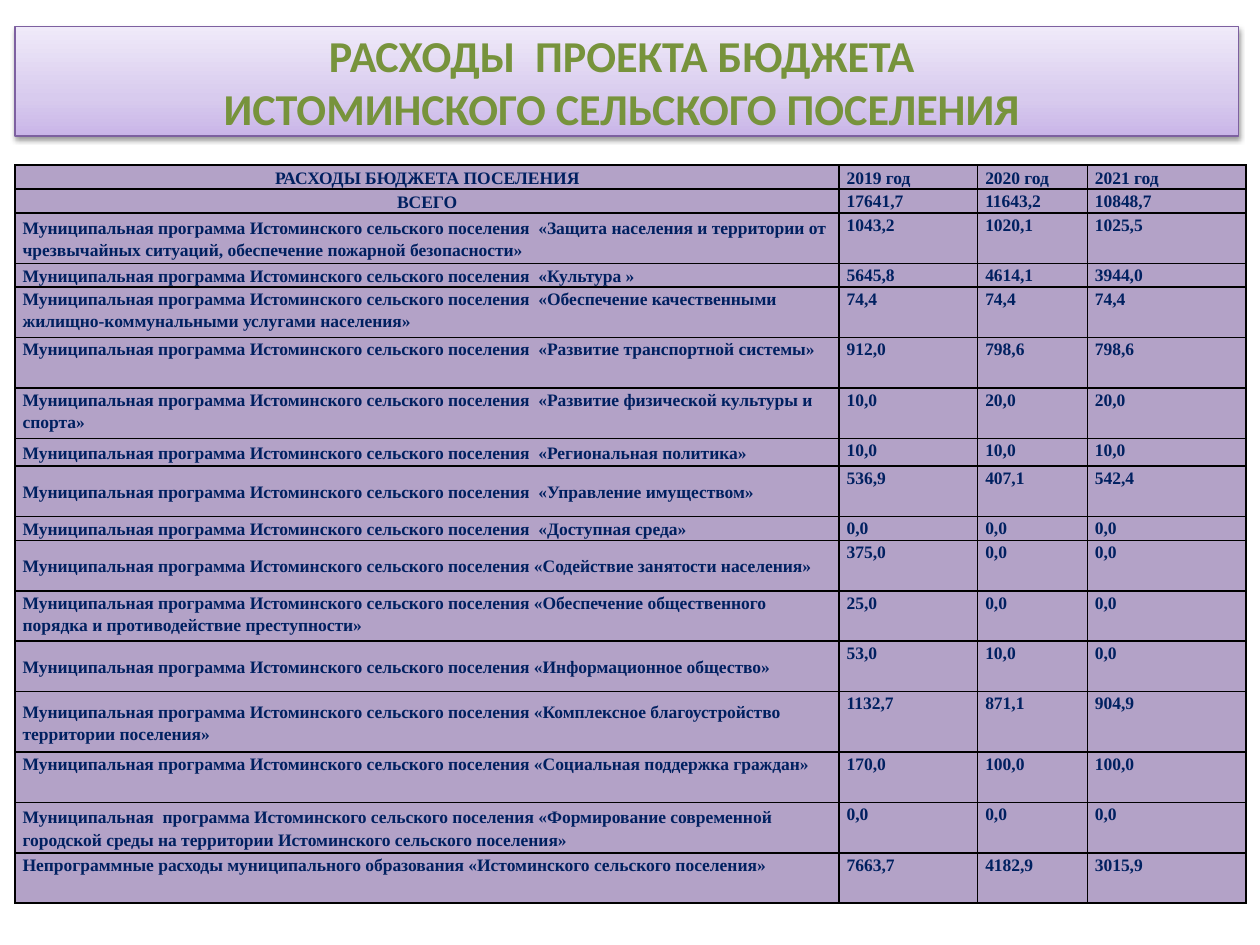
from copy import deepcopy

from pptx import Presentation
from pptx.dml.color import RGBColor
from pptx.enum.text import MSO_ANCHOR as Anchor, MSO_AUTO_SIZE as AutoSize, PP_ALIGN as Align
from pptx.oxml import parse_xml
from pptx.oxml.ns import nsdecls, qn
from pptx.util import Inches, Pt

COLORS = {
    "title": "77933C",
    "title_line": "7D60A0",
    "gradient_bottom": "C9B5E8",
    "gradient_middle": "D8CBEE",
    "gradient_top": "F0EAF9",
    "black": "000000",
    "cell": "B3A2C7",
    "text": "002060",
}

TITLE = "РАСХОДЫ  ПРОЕКТА БЮДЖЕТА \vИСТОМИНСКОГО СЕЛЬСКОГО ПОСЕЛЕНИЯ "
PROGRAM = "Муниципальная программа Истоминского сельского поселения "
COLUMN_WIDTHS = [6.54, 1.1, 0.87, 1.26]
LOW, MEDIUM, TALL, TALLEST = 0.19, 0.22, 0.4, 0.48
TOP, MIDDLE = Anchor.TOP, Anchor.MIDDLE

ROWS = [
    (LOW, MIDDLE, "РАСХОДЫ БЮДЖЕТА ПОСЕЛЕНИЯ", "2019 год", "2020 год", "2021 год"),
    (LOW, MIDDLE, "ВСЕГО", "17641,7", "11643,2", "10848,7"),
    (TALL, MIDDLE, PROGRAM + " «Защита населения и территории от чрезвычайных ситуаций, "
     "обеспечение пожарной безопасности»", "1043,2", "1020,1", "1025,5"),
    (LOW, MIDDLE, PROGRAM + " «Культура »", "5645,8", "4614,1", "3944,0"),
    (TALL, TOP, PROGRAM + " «Обеспечение качественными жилищно-коммунальными "
     "услугами населения»", "74,4", "74,4", "74,4"),
    (TALL, TOP, PROGRAM + " «Развитие транспортной системы»", "912,0", "798,6", "798,6"),
    (TALL, TOP, PROGRAM + " «Развитие физической культуры и спорта»", "10,0", "20,0", "20,0"),
    (MEDIUM, MIDDLE, PROGRAM + " «Региональная политика»", "10,0", "10,0", "10,0"),
    (TALL, MIDDLE, PROGRAM + " «Управление имуществом»", "536,9", "407,1", "542,4"),
    (LOW, MIDDLE, PROGRAM + " «Доступная среда»", "0,0", "0,0", "0,0"),
    (TALL, MIDDLE, PROGRAM + "«Содействие занятости населения»", "375,0", "0,0", "0,0"),
    (TALL, TOP, PROGRAM + "«Обеспечение общественного порядка и противодействие "
     "преступности»", "25,0", "0,0", "0,0"),
    (TALL, MIDDLE, PROGRAM + "«Информационное общество»", "53,0", "10,0", "0,0"),
    (TALLEST, MIDDLE, PROGRAM + "«Комплексное благоустройство территории поселения»",
     "1132,7", "871,1", "904,9"),
    (TALL, TOP, PROGRAM + "«Социальная поддержка граждан»", "170,0", "100,0", "100,0"),
    (TALL, MIDDLE, "Муниципальная  программа Истоминского сельского поселения «Формирование "
     "современной городской среды на территории Истоминского сельского поселения»",
     "0,0", "0,0", "0,0"),
    (TALL, TOP, "Непрограммные расходы муниципального образования "
     "«Истоминского сельского поселения»", "7663,7", "4182,9", "3015,9"),
]


def rgb(name):
    return RGBColor.from_string(COLORS[name])


def format_runs(para, font_name, size, color):
    for span in para.runs:
        span.font.name = font_name
        span.font.size = Pt(size)
        span.font.bold = True
        span.font.color.rgb = rgb(color)


def add_gradient_and_shadow(shape):
    stops = [(0, "gradient_bottom"), (35, "gradient_middle"), (100, "gradient_top")]
    stop_xml = "".join(
        f'<a:gs pos="{position * 1000}"><a:srgbClr val="{COLORS[name]}"/></a:gs>'
        for position, name in stops
    )
    properties = shape.element.spPr
    properties.append(parse_xml(
        f'<a:gradFill {nsdecls("a")} rotWithShape="1"><a:gsLst>{stop_xml}</a:gsLst>'
        '<a:lin ang="16200000" scaled="0"/></a:gradFill>'
    ))
    properties.append(parse_xml(
        f'<a:effectLst {nsdecls("a")}><a:outerShdw blurRad="{Pt(3.1)}" dist="{Pt(1.6)}" '
        f'dir="5400000" rotWithShape="0"><a:srgbClr val="{COLORS["black"]}">'
        '<a:alpha val="38000"/></a:srgbClr></a:outerShdw></a:effectLst>'
    ))


def place_title(page, left, top, width, height):
    title = page.shapes.title
    title.left, title.top, title.width, title.height = left, top, width, height
    add_gradient_and_shadow(title)
    title.line.color.rgb = rgb("title_line")
    title.line.width = Pt(0.75)
    frame = title.text_frame
    frame.text = TITLE
    frame.word_wrap = True
    frame.auto_size = AutoSize.NONE
    frame.vertical_anchor = MIDDLE
    para = frame.paragraphs[0]
    para.alignment = Align.CENTER
    format_runs(para, "Calibri", 25.2, "title")
    line_break = para._p.find(qn("a:br"))
    line_break.insert(0, deepcopy(para.runs[0]._r.rPr))


def add_borders(cell):
    properties = cell._tc.get_or_add_tcPr()
    for side in ("lnL", "lnR", "lnT", "lnB"):
        properties.append(parse_xml(
            f'<a:{side} {nsdecls("a")} w="{Pt(1)}"><a:solidFill>'
            f'<a:srgbClr val="{COLORS["black"]}"/></a:solidFill></a:{side}>'
        ))


def fill_cell(cell, text, anchor, alignment):
    cell.text_frame.text = text
    cell.margin_left = cell.margin_right = Inches(0.06)
    cell.margin_top = cell.margin_bottom = 0
    cell.vertical_anchor = anchor
    add_borders(cell)
    cell.fill.solid()
    cell.fill.fore_color.rgb = rgb("cell")
    para = cell.text_frame.paragraphs[0]
    para.alignment = alignment
    para.line_spacing = 1.15
    format_runs(para, "Times New Roman", 10, "text")


def place_budget_table(page, left, top, width, height):
    table = page.shapes.add_table(
        len(ROWS), len(COLUMN_WIDTHS), left, top, width, height
    ).table
    table.first_row = table.horz_banding = False
    for column, column_width in zip(table.columns, COLUMN_WIDTHS):
        column.width = Inches(column_width)
    for row_index, (row_height, name_anchor, *texts) in enumerate(ROWS):
        table.rows[row_index].height = Inches(row_height)
        for column_index, text in enumerate(texts):
            is_name = column_index == 0
            anchor = name_anchor if is_name else MIDDLE if row_index == 0 else TOP
            alignment = Align.CENTER if is_name and row_index < 2 else Align.LEFT
            fill_cell(table.cell(row_index, column_index), text, anchor, alignment)


def main():
    deck = Presentation()
    deck.slide_width, deck.slide_height = Inches(10), Inches(7.5)
    page = deck.slides.add_slide(deck.slide_layouts.get_by_name("Title Only"))
    place_title(page, Inches(0.12), Inches(0.21), Inches(9.71), Inches(0.87))
    place_budget_table(page, Inches(0.12), Inches(1.31), Inches(9.76), Inches(5.83))
    deck.save("out.pptx")


if __name__ == "__main__":
    main()
